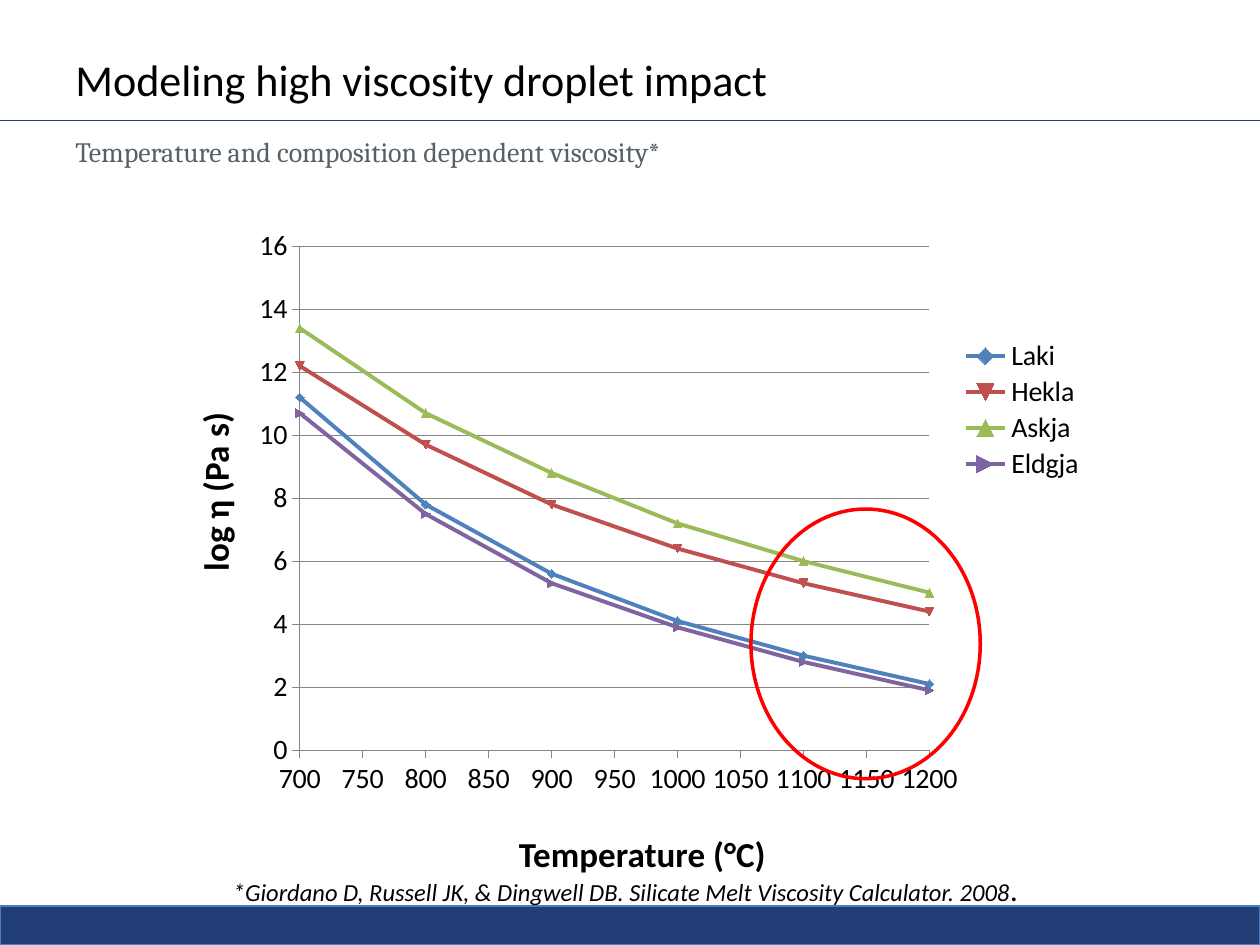
from lxml import etree
from pptx import Presentation
from pptx import util as u
from pptx.chart.data import XyChartData
from pptx.dml.color import RGBColor
from pptx.enum import chart as ch, shapes, text
from pptx.oxml import parse_xml
from pptx.oxml.ns import nsdecls, qn

PX = 9144  # 100 px to the inch
NAVY, GRID = "203D75", "868686"
TEMPERATURES = range(700, 1201, 100)
VISCOSITIES = {
    "Laki": ("4F81BD", [11.2, 7.8, 5.6, 4.1, 3.0, 2.1]),
    "Hekla": ("C0504D", [12.2, 9.7, 7.8, 6.4, 5.3, 4.4]),
    "Askja": ("9BBB59", [13.4, 10.7, 8.8, 7.2, 6.0, 5.0]),
    "Eldgja": ("8064A2", [10.7, 7.5, 5.3, 3.9, 2.8, 1.9]),
}


def px(*lengths):
    return [u.Emu(n * PX) for n in lengths]


def rgb(color):
    return RGBColor.from_string(color)


def set_attrs(obj, values):
    for name, value in values.items():
        setattr(obj, name, value)


def set_font(font, size, color="000000", name="Calibri", **extra):
    set_attrs(font, dict(size=u.Pt(size), name=name, **extra))
    font.color.rgb = rgb(color)


def set_line(line, color, width):
    line.color.rgb = rgb(color)
    line.width = u.Pt(width)


def set_layout(element, index, x, y, w, h, inner=False):
    """Place a chart part by fractions of the chart area."""
    for old in element.findall(qn("c:layout")):
        element.remove(old)
    target = '<c:layoutTarget val="inner"/>' if inner else ""
    element.insert(index, parse_xml(
        f'<c:layout {nsdecls("c")}><c:manualLayout>{target}'
        '<c:xMode val="edge"/><c:yMode val="edge"/>'
        f'<c:x val="{x}"/><c:y val="{y}"/><c:w val="{w}"/><c:h val="{h}"/>'
        '</c:manualLayout></c:layout>'))


class Deck:
    def __init__(self, width, height):
        self.prs = Presentation()
        set_attrs(self.prs, dict(zip(("slide_width", "slide_height"), px(width, height))))
        self.s = self.prs.slides.add_slide(self.prs.slide_layouts[6])

    def shape(self, kind, box, line, width, fill=None):
        sp = self.s.shapes.add_shape(kind, *px(*box))
        sp.shadow.inherit = False
        if fill:
            sp.fill.solid()
            sp.fill.fore_color.rgb = rgb(fill)
        else:
            sp.fill.background()
        set_line(sp.line, line, width)

    def rule(self, ends, color, width):
        line = self.s.shapes.add_connector(shapes.MSO_CONNECTOR.STRAIGHT, *px(*ends))
        set_line(line.line, color, width)
        etree.SubElement(line._element.spPr, qn("a:effectLst"))

    def text(self, box, runs, wrap=True, anchor="TOP", align="LEFT", rotation=0):
        """Add one paragraph made of (words, font values) runs."""
        sp = self.s.shapes.add_textbox(*px(*box))
        sp.rotation = rotation
        tf = sp.text_frame
        set_attrs(tf, dict(word_wrap=wrap, vertical_anchor=text.MSO_ANCHOR[anchor]))
        p = tf.paragraphs[0]
        p.alignment = text.PP_ALIGN[align]
        for words, font in runs:
            r = p.add_run()
            r.text = words
            set_font(r.font, **font)

    def axis(self, axis, low, high, step, grid):
        set_attrs(axis, dict(minimum_scale=low, maximum_scale=high, major_unit=step,
                             has_major_gridlines=grid, has_title=False,
                             major_tick_mark=ch.XL_TICK_MARK.OUTSIDE,
                             minor_tick_mark=ch.XL_TICK_MARK.NONE))
        set_font(axis.tick_labels.font, 16)
        set_attrs(axis.tick_labels, dict(number_format="General", number_format_is_linked=False))
        set_line(axis.format.line, GRID, 0.75)
        if grid:
            set_line(axis.major_gridlines.format.line, GRID, 0.75)

    def scatter(self, box, xs, series):
        data = XyChartData()
        for name, (_, ys) in series.items():
            points = data.add_series(name)
            for x, y in zip(xs, ys):
                points.add_data_point(x, y)
        chart = self.s.shapes.add_chart(
            ch.XL_CHART_TYPE.XY_SCATTER_SMOOTH, *px(*box), data).chart
        set_attrs(chart, dict(has_title=False, has_legend=True))
        set_font(chart.font, 10)
        self.axis(chart.category_axis, 700, 1200, 50, False)
        self.axis(chart.value_axis, 0, 16, 2, True)
        plot = chart.plots[0]
        plot.vary_by_categories = False
        for points, (color, _) in zip(plot.series, series.values()):
            points.smooth = True
            set_line(points.format.line, color, 2.25)
            points.marker.size = 5
            points.marker.format.fill.solid()
            points.marker.format.fill.fore_color.rgb = rgb(color)
            set_line(points.marker.format.line, color, 0.75)
        legend = chart.legend
        set_attrs(legend, dict(position=ch.XL_LEGEND_POSITION.RIGHT, include_in_layout=False))
        set_font(legend.font, 16)
        set_layout(legend._element, 1, 0.84, 0.18, 0.16, 0.24)
        plot_area = chart._chartSpace.chart.plotArea
        set_layout(plot_area, 0, 0.14, 0.03, 0.68, 0.83, inner=True)


def main():
    deck = Deck(1000, 750)
    deck.shape(shapes.MSO_SHAPE.RECTANGLE, (0, 719, 1000, 31), "4B7EBC", 0.75, NAVY)
    deck.rule((0, 96, 1004, 96), NAVY, 0.5)
    deck.text((50, 30, 622, 66),
              [("Modeling high viscosity droplet impact", dict(size=25.2))], anchor="MIDDLE")
    deck.text((50, 102, 910, 42),
              [("Temperature and composition dependent viscosity*",
                dict(size=16, color="556169", name="Cambria"))])
    deck.scatter((135, 181, 735, 482), TEMPERATURES, VISCOSITIES)
    axis_title = dict(size=20, bold=True)
    deck.text((89, 370, 161, 41), [("log η (Pa s)", axis_title)],
              wrap=False, align="CENTER", rotation=270)
    deck.text((402, 656, 232, 41), [("Temperature (°C)", axis_title)],
              wrap=False)
    deck.text((175, 686, 718, 40),
              [("*Giordano D, Russell JK, & Dingwell DB. Silicate Melt Viscosity Calculator. 2008",
                dict(size=14, italic=True)),
               (".", dict(size=18, italic=True))])
    deck.shape(shapes.MSO_SHAPE.OVAL, (596, 404, 182, 214), "FF0000", 2)
    deck.prs.save("out.pptx")


if __name__ == "__main__":
    main()
